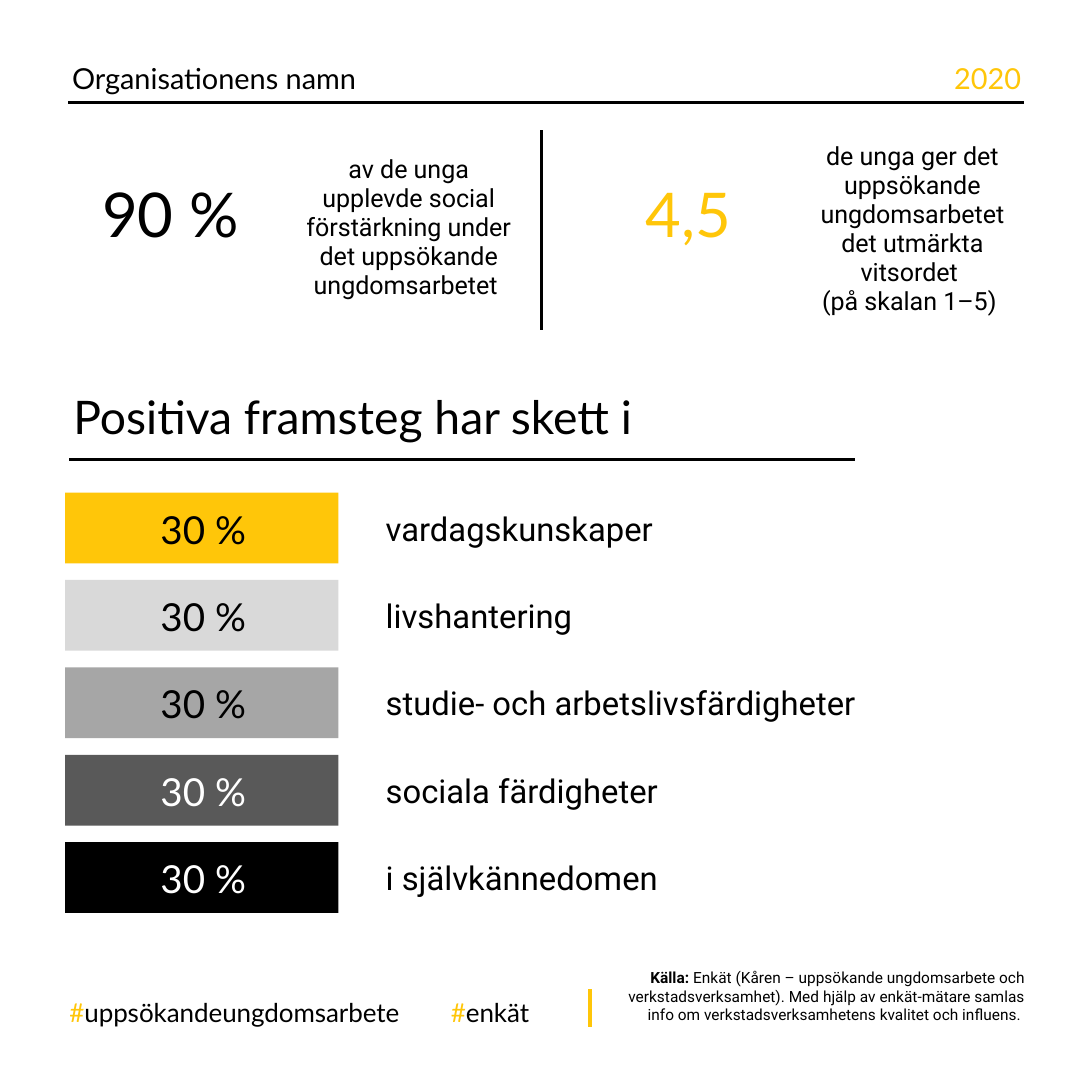
from pptx import Presentation
from pptx.dml.color import RGBColor
from pptx.enum.shapes import MSO_CONNECTOR, MSO_SHAPE
from pptx.enum.text import MSO_ANCHOR as Anchor, PP_ALIGN as Align
from pptx.oxml.ns import qn
from pptx.util import Pt

BLACK = RGBColor(0x00, 0x00, 0x00)
WHITE = RGBColor(0xFF, 0xFF, 0xFF)
YELLOW = RGBColor(0xFF, 0xC6, 0x09)
LIGHT_GREY = RGBColor(0xD9, 0xD9, 0xD9)
MID_GREY = RGBColor(0xA6, 0xA6, 0xA6)
DARK_GREY = RGBColor(0x59, 0x59, 0x59)

HEADING_FONT = "Lato"
BODY_FONT = "Roboto"
FIGURE_SPACING = Pt(24.8)

PROGRESS = [
    ("30 %", "vardagskunskaper", YELLOW, BLACK),
    ("30 %", "livshantering", LIGHT_GREY, BLACK),
    ("30 %", "studie- och arbetslivsfärdigheter", MID_GREY, BLACK),
    ("30 %", "sociala färdigheter", DARK_GREY, WHITE),
    ("30 %", "i självkännedomen", BLACK, WHITE),
]
PROGRESS_PITCH = 45.36


def set_frame(frame, insets, anchor):
    """Wrap the text and set the insets: left, top, right, bottom."""
    frame.word_wrap = True
    frame.vertical_anchor = anchor
    (frame.margin_left, frame.margin_top,
     frame.margin_right, frame.margin_bottom) = map(Pt, insets)


def style(paragraph, font, size, color=None, align=Align.LEFT, spacing=None):
    paragraph.alignment = align
    if spacing is not None:
        paragraph.line_spacing = spacing
    paragraph.font.name = font
    paragraph.font.size = Pt(size)
    if color is not None:
        paragraph.font.color.rgb = color


def add_frame(slide, box, insets, anchor):
    frame = slide.shapes.add_textbox(*map(Pt, box)).text_frame
    set_frame(frame, insets, anchor)
    return frame


def add_text(slide, box, lines, font, size, color=BLACK, align=Align.LEFT,
             spacing=None, insets=(0, 0, 0, 0), anchor=Anchor.TOP):
    frame = add_frame(slide, box, insets, anchor)
    frame.text = "\n".join(lines)
    for paragraph in frame.paragraphs:
        style(paragraph, font, size, color, align, spacing)


def add_rule(slide, x1, y1, x2, y2, color=BLACK, width=1.5):
    rule = slide.shapes.add_connector(
        MSO_CONNECTOR.STRAIGHT, Pt(x1), Pt(y1), Pt(x2), Pt(y2))
    rule.line.color.rgb = color
    rule.line.width = Pt(width)
    properties = rule._element.spPr
    properties.append(properties.makeelement(qn("a:effectLst"), {}))


def add_header(slide):
    add_text(slide, (36, 24.5, 307.5, 22.3), ["Organisationens namn"],
             HEADING_FONT, 15, spacing=FIGURE_SPACING, insets=(1.44, 0, 2.9, 8.6))
    add_text(slide, (458.6, 24.5, 71.3, 22.3), ["2020"], HEADING_FONT, 15, YELLOW,
             Align.RIGHT, FIGURE_SPACING, (1.44, 0, 0, 8.6))
    add_rule(slide, 35.3, 53.3, 531.4, 53.3)


def add_key_figure(slide, left, figure, color, caption_box, caption, caption_inset):
    add_text(slide, (left, 98.6, 108, 53.3), [figure], HEADING_FONT, 32, color,
             Align.CENTER, FIGURE_SPACING, (1.44, 10.1, 0, 22.3))
    add_text(slide, caption_box, caption, BODY_FONT, 13, align=Align.CENTER,
             spacing=Pt(15), insets=(caption_inset, 3.6, 8.64, 3.6),
             anchor=Anchor.MIDDLE)


def add_progress_row(slide, row, share, label, fill, color):
    offset = row * PROGRESS_PITCH
    bar = slide.shapes.add_shape(
        MSO_SHAPE.RECTANGLE, Pt(33.84), Pt(255.6 + offset), Pt(141.84), Pt(36.72))
    bar.shadow.inherit = False
    bar.fill.solid()
    bar.fill.fore_color.rgb = fill
    bar.line.fill.background()
    bar.text_frame.text = share
    set_frame(bar.text_frame, (1.44, 5.76, 0, 5.76), Anchor.MIDDLE)
    style(bar.text_frame.paragraphs[0], HEADING_FONT, 20, color,
          Align.CENTER, FIGURE_SPACING)
    add_text(slide, (191.52, 259.92 + offset, 283, 28.08), [label], BODY_FONT, 17,
             insets=(8.64, 3.6, 5.76, 3.6), anchor=Anchor.MIDDLE)


def add_hashtag(slide, left, width, tag):
    frame = add_frame(slide, (left, 512.64, width, 24.48), (0, 3.6, 0, 3.6), Anchor.TOP)
    paragraph = frame.paragraphs[0]
    style(paragraph, HEADING_FONT, 13.5, spacing=1.07)
    for text, color in (("#", YELLOW), (tag, BLACK)):
        run = paragraph.add_run()
        run.text = text
        run.font.color.rgb = color


def add_source_note(slide):
    add_rule(slide, 306, 532.8, 306, 513.4, YELLOW, 2)
    frame = add_frame(slide, (314.64, 502.56, 217.44, 28.8), (5.76, 0, 0, 0),
                      Anchor.MIDDLE)
    paragraph = frame.paragraphs[0]
    style(paragraph, BODY_FONT, 8, BLACK, Align.RIGHT)
    heading = paragraph.add_run()
    heading.text = "Källa: "
    heading.font.bold = True
    paragraph.add_run().text = (
        "Enkät (Kåren – uppsökande ungdomsarbete och verkstadsverksamhet). "
        "Med hjälp av enkät-mätare samlas info om verkstadsverksamhetens "
        "kvalitet och influens. ")


def main():
    presentation = Presentation()
    presentation.slide_width = presentation.slide_height = Pt(566.64)
    slide = presentation.slides.add_slide(presentation.slide_layouts[6])

    add_header(slide)
    add_key_figure(
        slide, 33.84, "90 %", BLACK, (147.6, 76.3, 128.9, 82.8),
        ["av de unga upplevde social förstärkning under "
         "det uppsökande ungdomsarbetet "], 8.64)
    add_rule(slide, 280.8, 67.7, 280.8, 171.4)
    add_key_figure(
        slide, 302.4, "4,5", YELLOW, (413.3, 69.8, 117.4, 97.9),
        ["de unga ger det uppsökande ungdomsarbetet det utmärkta vitsordet ",
         "(på skalan 1–5) "], 11.52)

    add_text(slide, (38.16, 198, 493.9, 36), ["Positiva framsteg har skett i"],
             HEADING_FONT, 24, insets=(0, 3.6, 8.64, 3.6), anchor=Anchor.MIDDLE)
    add_rule(slide, 36, 238.3, 443.5, 238.3)
    for row, progress in enumerate(PROGRESS):
        add_progress_row(slide, row, *progress)

    add_hashtag(slide, 36, 199.4, "uppsökandeungdomsarbete")
    add_hashtag(slide, 234, 52.6, "enkät")
    add_source_note(slide)
    presentation.save("out.pptx")


if __name__ == "__main__":
    main()
